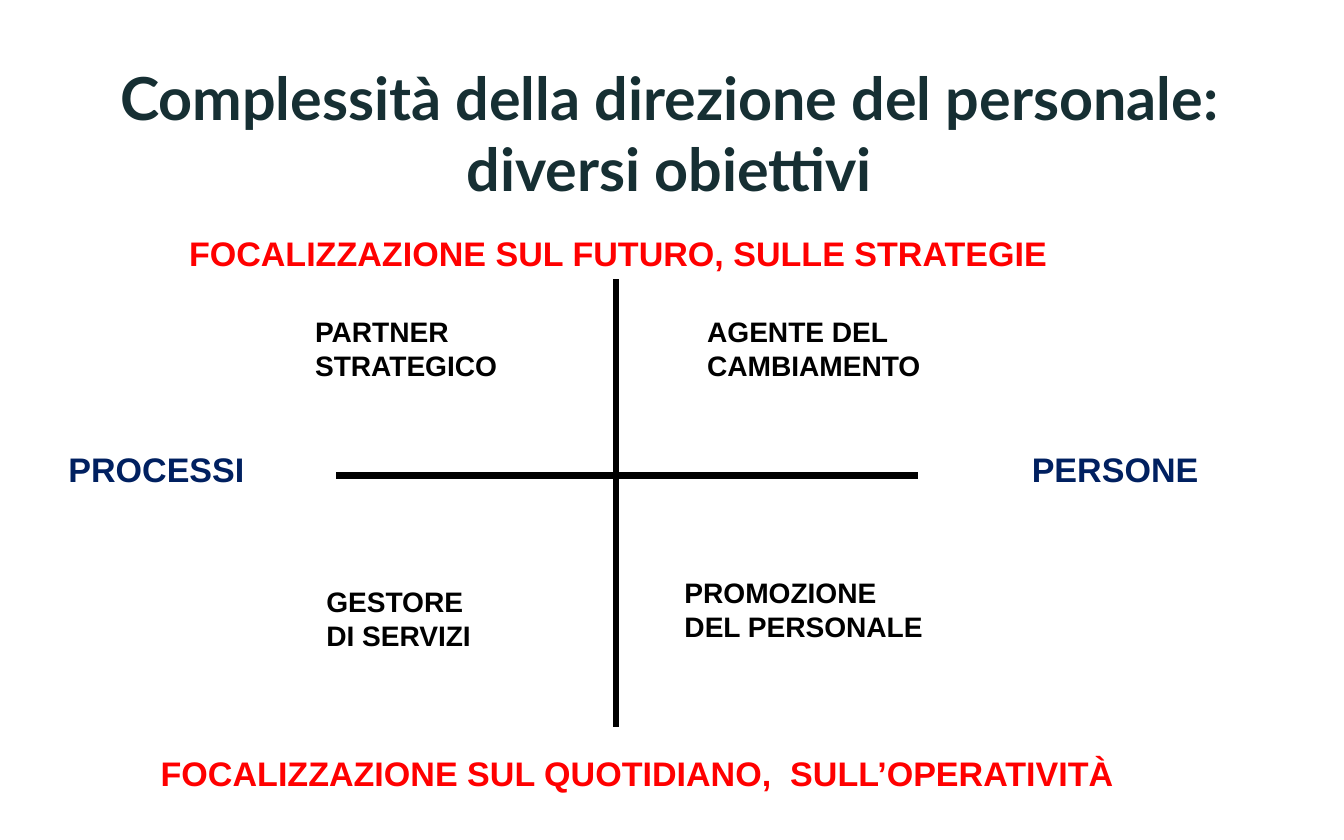
from pptx import Presentation
from pptx.dml.color import RGBColor
from pptx.enum.shapes import MSO_CONNECTOR as Link
from pptx.enum.text import MSO_AUTO_SIZE as Fit, PP_ALIGN as Align
from pptx.oxml.ns import qn
from pptx.util import Pt
from lxml.etree import SubElement

BLACK = RGBColor(0, 0, 0)
NAVY = RGBColor(0, 0x20, 0x60)
RED = RGBColor(0xFF, 0, 0)
TEAL = RGBColor(0x16, 0x2F, 0x33)

FRAME = {
    "margin_left": Pt(8.64),
    "margin_right": Pt(8.64),
    "margin_top": Pt(4.32),
    "margin_bottom": Pt(4.32),
    "auto_size": Fit.SHAPE_TO_FIT_TEXT,
}
TITLE = {"name": "Lato", "size": Pt(40), "bold": True}
LABEL = {"name": "Arial", "size": Pt(23), "bold": True}
ROLE = {"name": "Arial", "size": Pt(19), "bold": True}

SIDES = [
    ("PERSONE", 687.8, 131),
    ("PROCESSI", 37.5, 137.5),
]
FOCI = [
    ("FOCALIZZAZIONE SUL FUTURO, SULLE STRATEGIE", 60.6, 152.6, 714.2),
    ("FOCALIZZAZIONE SUL QUOTIDIANO,  SULL’OPERATIVITÀ", 21.6, 503.6, 818),
]
ROLES = [
    ("PARTNER\vSTRATEGICO", 204, 207.8, 150.5),
    ("AGENTE DEL\vCAMBIAMENTO", 468.7, 208.1, 177.8),
    ("GESTORE\vDI SERVIZI", 211.6, 390.2, 122.4),
    ("PROMOZIONE\vDEL PERSONALE", 453.4, 384, 189.4),
]


def apply(item, style):
    for key, value in style.items():
        setattr(item, key, value)


def add_axis(slide, *ends):
    axis = slide.shapes.add_connector(Link.STRAIGHT, *map(Pt, ends))
    axis.line.color.rgb = BLACK
    axis.line.width = Pt(4.5)
    SubElement(axis.element.spPr, qn("a:effectLst"))


def add_text(slide, text, place, font, color, align=Align.LEFT, wrap=False):
    frame = slide.shapes.add_textbox(*map(Pt, place)).text_frame
    apply(frame, FRAME)
    frame.word_wrap = wrap
    frame.text = text
    para = frame.paragraphs[0]
    para.alignment = align
    for run in para.runs:
        apply(run.font, font)
        run.font.color.rgb = color


def main():
    deck = Presentation()
    deck.slide_width = Pt(907.2)
    deck.slide_height = Pt(567)
    slide = deck.slides.add_slide(deck.slide_layouts[6])
    add_axis(slide, 226.8, 321.1, 619.9, 321.1)
    add_axis(slide, 415.9, 188.6, 415.9, 491)
    for text, left, width in SIDES:
        add_text(slide, text, (left, 298.1, width, 36.7), LABEL, NAVY)
    for text, left, top, width in FOCI:
        place = left, top, width, 36.7
        add_text(slide, text, place, LABEL, RED, Align.CENTER, True)
    for text, left, top, width in ROLES:
        add_text(slide, text, (left, top, width, 48.2), ROLE, BLACK)
    title = "Complessità della direzione del personale: diversi obiettivi"
    place = 39.2, 37, 825.1, 104.4
    add_text(slide, title, place, TITLE, TEAL, Align.CENTER, True)
    deck.save("out.pptx")


if __name__ == "__main__":
    main()
